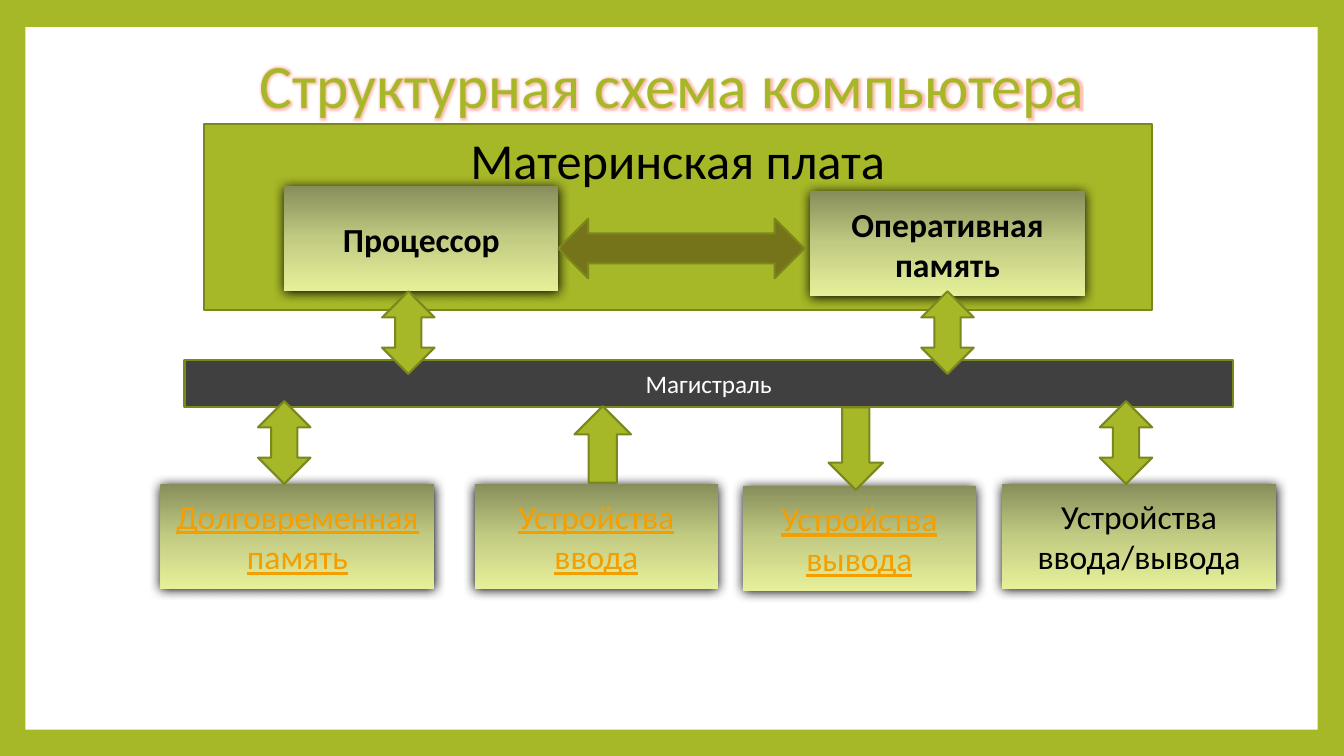
import copy
from dataclasses import dataclass

import lxml.etree
import pptx
import pptx.dml.color
import pptx.enum.shapes
import pptx.enum.text
import pptx.oxml.ns
import pptx.util

SHAPE = pptx.enum.shapes.MSO_SHAPE
ANCHOR = pptx.enum.text.MSO_ANCHOR
SLIDE_WIDTH = pptx.util.Inches(13.333)
SLIDE_HEIGHT = pptx.util.Inches(7.5)


@dataclass(frozen=True)
class Theme:
    font: str = "Calibri"
    lime: str = "A6B727"
    outline: str = "7B871D"
    olive: str = "75741A"
    bus: str = "404040"
    white: str = "FFFFFF"
    black: str = "000000"
    link: str = "F59E00"
    glow: str = "FF6040"
    gradient: tuple = ((0, "888E5B"), (0.5, "C2CB82"), (1, "E6F09A"))
    title_size: int = 44
    board_size: int = 36
    unit_size: int = 24
    bus_size: int = 18
    outline_width: float = 1.5


THEME = Theme()


def rgb(value):
    return pptx.dml.color.RGBColor.from_string(value)


def add_effect(parent, kind, colour, alpha, **attributes):
    qn = pptx.oxml.ns.qn
    effect = lxml.etree.SubElement(parent, qn(f"a:{kind}"), attributes)
    tint = lxml.etree.SubElement(effect, qn("a:srgbClr"), val=colour)
    lxml.etree.SubElement(tint, qn("a:alpha"), val=str(alpha * 1000))


def place(part, left, top, width, height):
    part.left = int(SLIDE_WIDTH * left / 100)
    part.top = int(SLIDE_HEIGHT * top / 100)
    part.width = int(SLIDE_WIDTH * width / 100)
    part.height = int(SLIDE_HEIGHT * height / 100)


def write(part, text, size, colour, bold=False, underline=False, anchor=ANCHOR.MIDDLE):
    frame = part.text_frame
    frame.word_wrap = True
    frame.vertical_anchor = anchor
    paragraph = frame.paragraphs[0]
    paragraph.alignment = pptx.enum.text.PP_ALIGN.CENTER
    run = paragraph.add_run()
    run.text = text
    run.font.name = THEME.font
    run.font.size = pptx.util.Pt(size)
    run.font.bold = bold
    run.font.underline = underline
    run.font.color.rgb = rgb(colour)
    return run


def add_block(slide, kind, area, fill, outlined=True):
    block = slide.shapes.add_shape(kind, 0, 0, 0, 0)
    place(block, *area)
    block.shadow.inherit = False
    block.fill.solid()
    block.fill.fore_color.rgb = rgb(fill)
    if outlined:
        block.line.color.rgb = rgb(THEME.outline)
        block.line.width = pptx.util.Pt(THEME.outline_width)
    else:
        block.line.fill.background()
    return block


def add_unit(slide, area, text, colour=THEME.black, **style):
    unit = add_block(slide, SHAPE.RECTANGLE, area, THEME.lime, outlined=False)
    unit.fill.gradient()
    unit.fill.gradient_angle = 270
    stop_list = unit._element.spPr.find(".//" + pptx.oxml.ns.qn("a:gsLst"))
    stop_list.append(copy.deepcopy(stop_list[0]))
    for stop, (position, shade) in zip(unit.fill.gradient_stops, THEME.gradient):
        stop.position = position
        stop.color.rgb = rgb(shade)
    effects = unit._element.spPr.find(pptx.oxml.ns.qn("a:effectLst"))
    add_effect(effects, "outerShdw", THEME.black, 100, blurRad=str(pptx.util.Pt(8.5)),
               dist=str(pptx.util.Pt(1)), dir="5400000", rotWithShape="0")
    write(unit, text, THEME.unit_size, colour, **style)


def add_title(slide, text):
    title = slide.shapes.title
    place(title, 6.9, 5.33, 86.25, 12.8)
    run = write(title, text, THEME.title_size, THEME.lime)
    title.text_frame.paragraphs[0].line_spacing = 0.9
    fill = run.font._element.find(pptx.oxml.ns.qn("a:solidFill"))
    effects = lxml.etree.Element(pptx.oxml.ns.qn("a:effectLst"))
    fill.addnext(effects)
    add_effect(effects, "glow", THEME.glow, 40, rad=str(pptx.util.Pt(5)))


def add_frame(slide):
    slide.background.fill.solid()
    slide.background.fill.fore_color.rgb = rgb(THEME.lime)
    panel = add_block(slide, SHAPE.RECTANGLE, (1.9, 3.6, 96.15, 92.93),
                      THEME.white, outlined=False)
    slide.shapes._spTree.insert(2, panel._element)


def add_motherboard(slide):
    board = add_block(slide, SHAPE.RECTANGLE, (15.15, 16.4, 70.58, 24.67), THEME.lime)
    write(board, "Материнская плата", THEME.board_size, THEME.black, anchor=ANCHOR.TOP)
    for left, top, text in ((21.15, 24.67, "Процессор"),
                            (60.3, 25.33, "Оперативная память")):
        add_unit(slide, (left, top, 20.4, 13.87), text, bold=True)
    add_block(slide, SHAPE.LEFT_RIGHT_ARROW, (41.55, 28.93, 18.3, 7.87), THEME.olive)


def add_bus(slide):
    bus = add_block(slide, SHAPE.RECTANGLE, (13.73, 47.6, 78, 6.27), THEME.bus)
    write(bus, "Магистраль", THEME.bus_size, THEME.white)


def add_devices(slide):
    devices = (
        (11.93, 64, 20.4, "Долговременная память", True),
        (35.33, 64, 18.08, "Устройства ввода", True),
        (55.28, 64.27, 17.33, "Устройства вывода", True),
        (74.55, 64, 20.4, "Устройства ввода/вывода", False),
    )
    for left, top, width, text, linked in devices:
        colour = THEME.link if linked else THEME.black
        add_unit(slide, (left, top, width, 13.87), text, colour, underline=linked)


def add_exchange_arrows(slide):
    for left, top in ((28.43, 38.53), (68.55, 38.53), (19.2, 53.07), (81.83, 53.07)):
        add_block(slide, SHAPE.UP_DOWN_ARROW, (left, top, 3.9, 10.93), THEME.lime)
    add_block(slide, SHAPE.UP_ARROW, (42.75, 53.73, 4.2, 10.13), THEME.lime)
    add_block(slide, SHAPE.DOWN_ARROW, (61.65, 53.87, 4.05, 10.93), THEME.lime)


def main():
    deck = pptx.Presentation()
    deck.slide_width = SLIDE_WIDTH
    deck.slide_height = SLIDE_HEIGHT
    slide = deck.slides.add_slide(deck.slide_layouts[5])
    add_frame(slide)
    add_title(slide, "Структурная схема компьютера")
    add_motherboard(slide)
    add_bus(slide)
    add_devices(slide)
    add_exchange_arrows(slide)
    deck.save("out.pptx")


if __name__ == "__main__":
    main()
